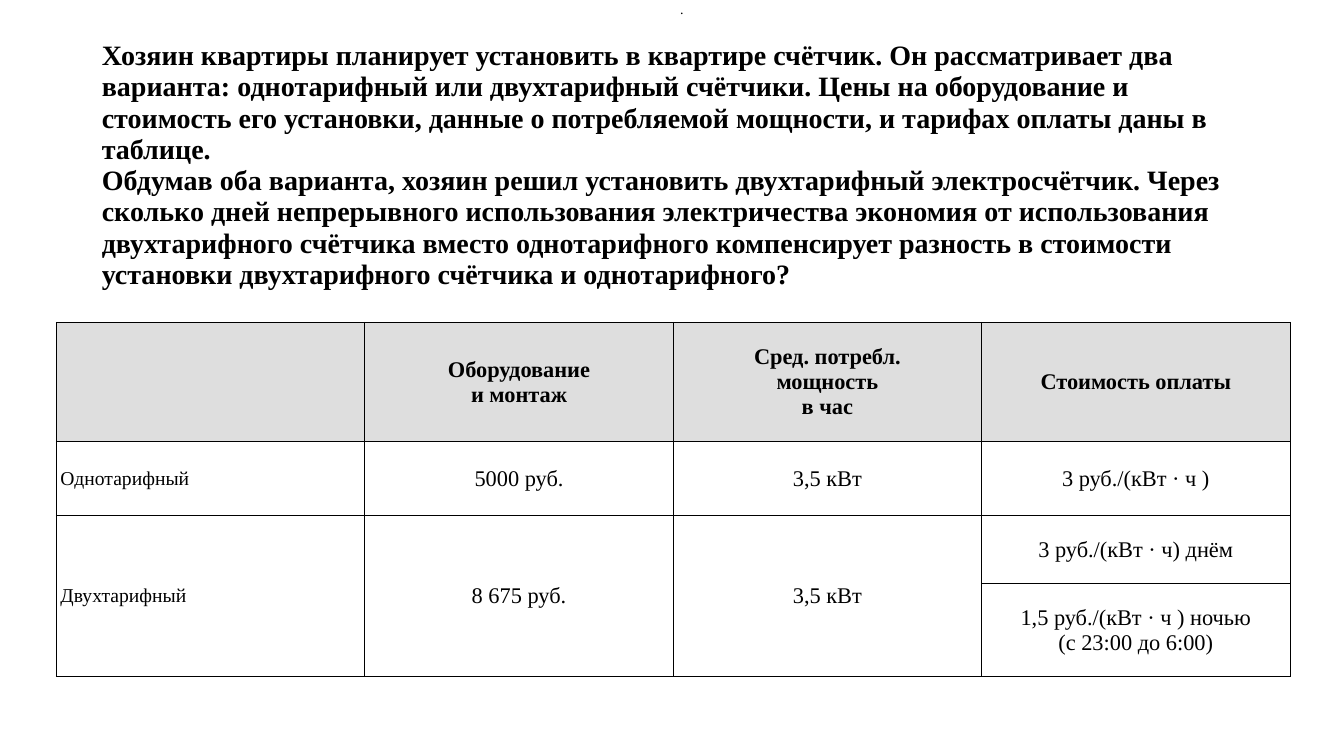
import pptx
import pptx.dml.color
import pptx.enum.text
import pptx.oxml.ns
import pptx.util
from lxml import etree

Pt = pptx.util.Pt
Align = pptx.enum.text.PP_ALIGN
Anchor = pptx.enum.text.MSO_ANCHOR
qn = pptx.oxml.ns.qn

BLACK = pptx.dml.color.RGBColor(0x00, 0x00, 0x00)
WHITE = pptx.dml.color.RGBColor(0xFF, 0xFF, 0xFF)
HEADER_GREY = pptx.dml.color.RGBColor(0xDE, 0xDE, 0xDE)
FONT = "Times New Roman"


def add_text(para, text, size, bold=False):
    """Add one run per line of text, with line breaks between them."""
    for number, line in enumerate(text.split("\n")):
        if number:
            para.add_line_break()
        span = para.add_run()
        span.text = line
        span.font.name = FONT
        span.font.size = Pt(size)
        span.font.bold = bold
        span.font.color.rgb = BLACK


def add_borders(cell):
    properties = cell._tc.get_or_add_tcPr()
    for position, side in enumerate(("lnL", "lnR", "lnT", "lnB")):
        line = etree.Element(qn(f"a:{side}"), w=str(Pt(0.75)))
        fill = etree.SubElement(line, qn("a:solidFill"))
        etree.SubElement(fill, qn("a:srgbClr"), val=str(BLACK))
        properties.insert(position, line)


deck = pptx.Presentation()
deck.slide_width = Pt(960)
deck.slide_height = Pt(540)
page = deck.slides.add_slide(deck.slide_layouts[5])

# Problem statement
title = page.shapes.title
title.left, title.top, title.width, title.height = Pt(65.5), Pt(41), Pt(828), Pt(212.4)
frame = title.text_frame
frame.word_wrap = True
frame.auto_size = pptx.enum.text.MSO_AUTO_SIZE.NONE
frame.vertical_anchor = Anchor.BOTTOM
frame.margin_bottom = Pt(45.7)
para = frame.paragraphs[0]
para.alignment = Align.LEFT
para.line_spacing = 0.93
add_text(
    para,
    "Хозяин квартиры планирует установить в квартире счётчик. Он рассматривает два "
    "варианта: однотарифный или двухтарифный счётчики. Цены на оборудование и "
    "стоимость его установки, данные о потребляемой мощности, и тарифах оплаты даны в "
    "таблице.\n"
    "Обдумав оба варианта, хозяин решил установить двухтарифный электросчётчик. Через "
    "сколько дней непрерывного использования электричества экономия от использования "
    "двухтарифного счётчика вместо однотарифного компенсирует разность в стоимости "
    "установки двухтарифного счётчика и однотарифного?",
    20,
    bold=True,
)

# Tariff table
ROWS = [
    ["", "Оборудование\nи монтаж", "Сред. потребл.\nмощность\nв час", "Стоимость оплаты"],
    ["Однотарифный", "5000 руб.", "3,5 кВт", "3 руб./(кВт · ч )"],
    ["Двухтарифный", "8 675 руб.", "3,5 кВт", "3 руб./(кВт · ч) днём"],
    ["", "", "", "1,5 руб./(кВт · ч ) ночью\n(с 23:00 до 6:00)"],
]
ROW_HEIGHTS = [85.4, 52.8, 48.6, 66.2]
COLUMN_WIDTH = 220.3

table = page.shapes.add_table(
    len(ROWS), 4, Pt(40.3), Pt(230.2), Pt(4 * COLUMN_WIDTH), Pt(sum(ROW_HEIGHTS))
).table
table.first_row = False
table.horz_banding = False
for column in table.columns:
    column.width = Pt(COLUMN_WIDTH)
for row, height in zip(table.rows, ROW_HEIGHTS):
    row.height = Pt(height)

for row_number, texts in enumerate(ROWS):
    for column_number, text in enumerate(texts):
        is_header = row_number == 0
        is_label = column_number == 0
        cell = table.cell(row_number, column_number)
        cell.fill.solid()
        cell.fill.fore_color.rgb = HEADER_GREY if is_header else WHITE
        add_borders(cell)
        cell.vertical_anchor = Anchor.MIDDLE
        cell.margin_left = cell.margin_right = Pt(2.9)
        cell.margin_top = cell.margin_bottom = Pt(2.9)
        if text:
            para = cell.text_frame.paragraphs[0]
            para.alignment = Align.LEFT if is_label else Align.CENTER
            add_text(para, text, 14 if is_label else 16, bold=is_header)

for column_number in range(3):
    table.cell(2, column_number).merge(table.cell(3, column_number))

# Full stop at the top edge
box = page.shapes.add_textbox(Pt(463.7), Pt(-2.9), Pt(32.4), Pt(41))
box.text_frame.word_wrap = True
para = box.text_frame.paragraphs[0]
para.alignment = Align.JUSTIFY
para._p.get_or_add_pPr().set("indent", str(Pt(15)))
add_text(para, ".", 10)

deck.save("out.pptx")
